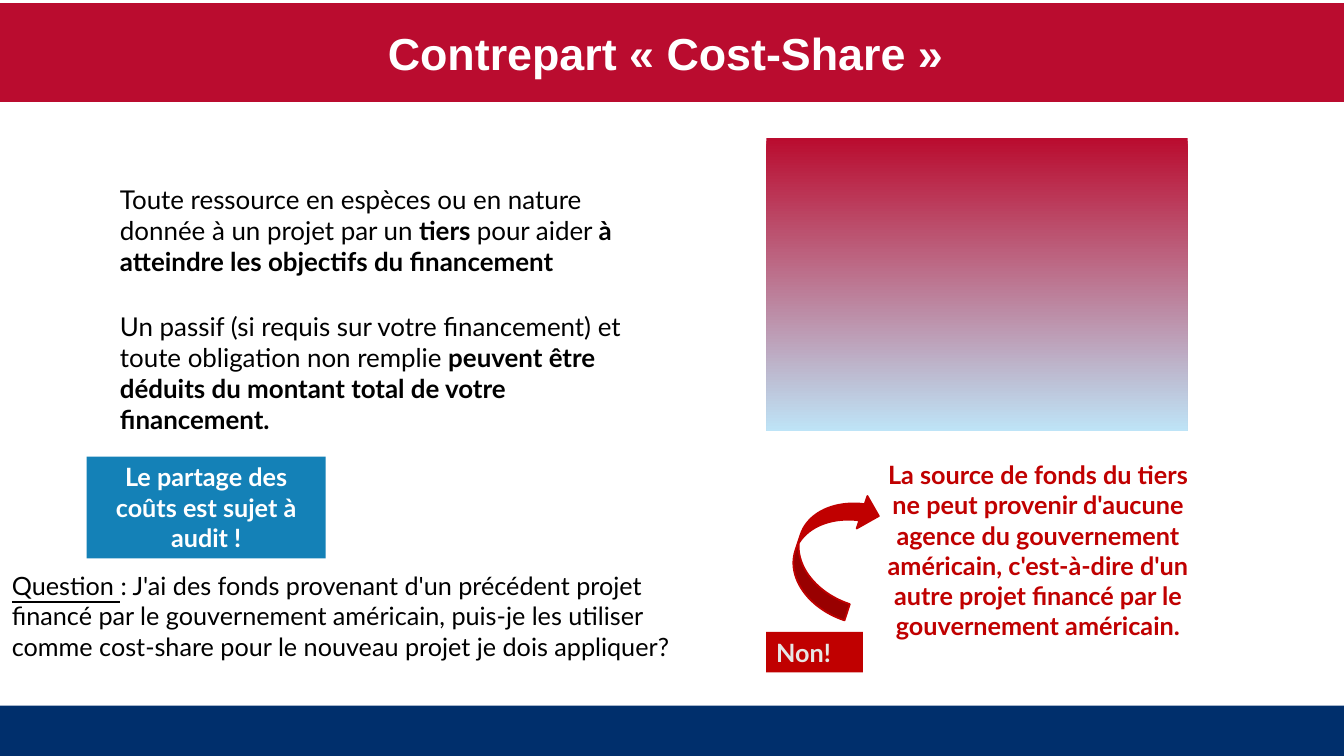
from dataclasses import dataclass

from pptx import Presentation
from pptx import util as u
from pptx.dml.color import RGBColor
from pptx.enum import shapes, text

EMU_PER_PX = 9144
RED, DARK_RED, WHITE, BLACK = "BA0C2F", "C00000", "FFFFFF", "000000"
LEFT, CENTER = text.PP_ALIGN.LEFT, text.PP_ALIGN.CENTER


@dataclass
class Run:
    """A stretch of text with its own emphasis."""
    words: str
    bold: bool = False
    underline: bool = False


@dataclass
class Box:
    """A block of text, with or without a filled rectangle behind it."""
    at: tuple[int, int, int, int]
    paragraphs: list[list[Run]]
    color: str = BLACK
    fill: str = ""
    align: text.PP_ALIGN = LEFT
    size: float = 18
    font: str = "Lato"
    anchor: text.MSO_ANCHOR = text.MSO_ANCHOR.TOP
    side_inset: int = 10
    indent: int = 0
    gap: int = 0


TITLE = Box((0, 3, 1333, 98), [[Run("Contrepart « Cost-Share » ", bold=True)]],
            WHITE, RED, CENTER, 32, "Arial", text.MSO_ANCHOR.MIDDLE)

BOXES = [
    Box((109, 177, 542, 298), [
        [Run("Toute ressource en espèces ou en nature donnée à un projet par un "),
         Run("tiers ", bold=True), Run("pour aider "),
         Run("à atteindre les objectifs du financement", bold=True)],
        [Run("Un passif (si requis sur votre financement) et toute obligation non remplie "),
         Run("peuvent être déduits du montant total de votre financement.", bold=True)],
    ], size=18.5, side_inset=0, indent=10, gap=24),
    Box((863, 451, 333, 162), [[Run(
        "La source de fonds du tiers ne peut provenir d'aucune agence du gouvernement "
        "américain, c'est-à-dire d'un autre projet financé par le gouvernement américain.",
        bold=True)]], DARK_RED, align=CENTER),
    Box((86, 453, 237, 101), [[Run("Le partage des coûts est sujet à audit !", bold=True)]],
        WHITE, "1481B7", CENTER),
    Box((2, 561, 710, 131), [[
        Run("Question ", underline=True),
        Run(": J'ai des fonds provenant d'un précédent projet financé par le gouvernement "
            "américain, puis-je les utiliser comme cost-share pour le nouveau projet je dois "
            "appliquer?")]]),
    Box((760, 627, 96, 40), [[Run("Non!", bold=True)]], "E7E7E5", DARK_RED),
]


def px(n: int) -> u.Emu:
    """Turn px into EMU."""
    return u.Emu(n * EMU_PER_PX)


def rgb(color: str) -> RGBColor:
    """Turn a hex string into a colour."""
    return RGBColor.from_string(color)


def paint(sp, color: str) -> None:
    """Give a shape a solid fill."""
    sp.fill.solid()
    sp.fill.fore_color.rgb = rgb(color)


def add_shape(s, kind: shapes.MSO_SHAPE, at: tuple[int, int, int, int], fill: str):
    """Add a filled preset shape without line or shadow."""
    sp = s.shapes.add_shape(kind, *map(px, at))
    sp.shadow.inherit = False
    paint(sp, fill)
    sp.line.fill.background()
    return sp


def write(sp, box: Box) -> None:
    """Write the paragraphs of a box into a shape."""
    tf = sp.text_frame
    tf.word_wrap = True
    tf.auto_size = text.MSO_AUTO_SIZE.NONE
    tf.vertical_anchor = box.anchor
    tf.margin_left = tf.margin_right = px(box.side_inset)
    tf.margin_top = tf.margin_bottom = px(5)
    for i, runs in enumerate(box.paragraphs):
        p = tf.add_paragraph() if i else tf.paragraphs[0]
        p.alignment = box.align
        if box.indent:
            p._p.get_or_add_pPr().set("marL", str(px(box.indent)))
        if i:
            p.space_before = u.Pt(box.gap)
        for run in runs:
            r = p.add_run()
            r.text = run.words
            r.font.name, r.font.size = box.font, u.Pt(box.size)
            r.font.bold, r.font.underline = run.bold, run.underline
            r.font.color.rgb = rgb(box.color)


def add_box(s, box: Box) -> None:
    """Add a text box or a filled rectangle with its text."""
    if box.fill:
        sp = add_shape(s, shapes.MSO_SHAPE.RECTANGLE, box.at, box.fill)
    else:
        sp = s.shapes.add_textbox(*map(px, box.at))
    write(sp, box)


def add_title(s, box: Box) -> None:
    """Place and format the title placeholder."""
    sp = s.shapes.title
    sp.left, sp.top, sp.width, sp.height = map(px, box.at)
    paint(sp, box.fill)
    write(sp, box)


def add_gradient_panel(s) -> None:
    """Add the panel that fades from red to light blue."""
    sp = add_shape(s, shapes.MSO_SHAPE.RECTANGLE, (760, 137, 418, 291), RED)
    sp.fill.gradient()
    sp.fill.gradient_angle = 270
    for stop, color in zip(sp.fill.gradient_stops, (RED, "BEE4F7")):
        stop.color.rgb = rgb(color)


def add_arrow(s) -> None:
    """Add the curved arrow from the answer to its reason."""
    sp = add_shape(s, shapes.MSO_SHAPE.CURVED_DOWN_ARROW, (762, 511, 126, 68), DARK_RED)
    sp.rotation = 288.2
    sp.line.color.rgb = rgb(DARK_RED)
    sp.line.width = u.Pt(1.25)


def main() -> None:
    """Build and save the slide."""
    prs = Presentation()
    prs.slide_width, prs.slide_height = px(1333), px(750)
    s = prs.slides.add_slide(prs.slide_layouts.get_by_name("Title Only"))
    add_shape(s, shapes.MSO_SHAPE.RECTANGLE, (0, 700, 1333, 50), "002F6C")
    add_title(s, TITLE)
    for box in BOXES:
        add_box(s, box)
    add_gradient_panel(s)
    add_arrow(s)
    prs.save("out.pptx")


if __name__ == "__main__":
    main()
